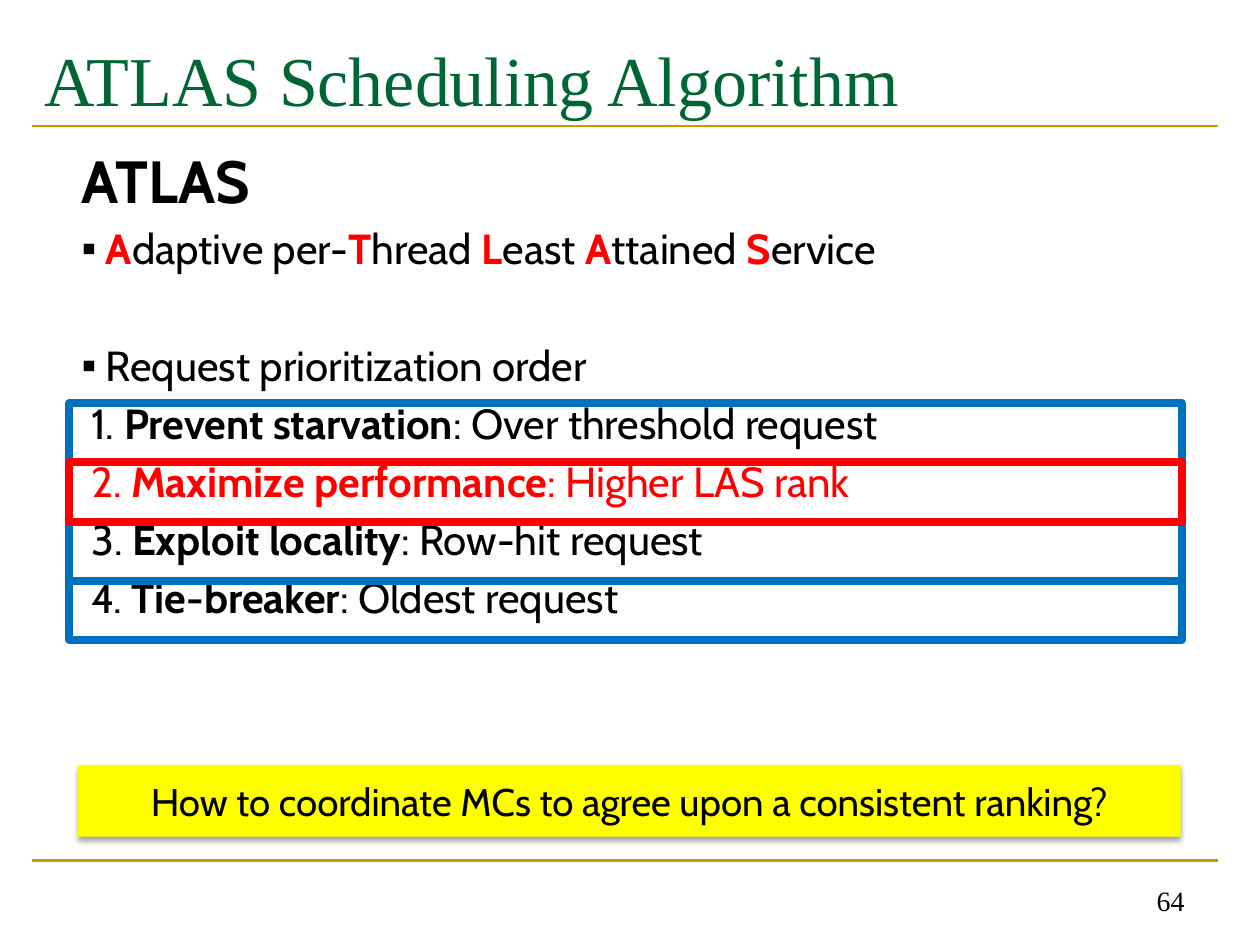
from dataclasses import dataclass

from lxml.etree import SubElement
from pptx import Presentation
from pptx.dml.color import RGBColor as RGB
from pptx.enum.shapes import MSO_CONNECTOR as Connector, MSO_SHAPE as Shape
from pptx.enum.text import MSO_ANCHOR as Anchor, PP_ALIGN as Align
from pptx.oxml.ns import qn
from pptx.util import Inches, Pt


@dataclass(frozen=True)
class Theme:
    serif: str = "Times New Roman"
    sans: str = "Cabin"
    black: RGB = RGB(0, 0, 0)
    green: RGB = RGB(0x00, 0x66, 0x33)
    gold: RGB = RGB(0xCC, 0x99, 0x00)
    red: RGB = RGB(0xFF, 0, 0)
    blue: RGB = RGB(0x00, 0x70, 0xC0)
    yellow: RGB = RGB(0xFF, 0xFF, 0)
    title: int = 40
    heading: int = 34
    body: int = 24
    question: int = 22
    number: int = 16
    rule: float = 1.5
    frame: float = 4.5
    gap: float = 4.4
    section_gap: float = 38


THEME = Theme()
ACRONYM = [("A", "daptive per-"), ("T", "hread "), ("L", "east "),
           ("A", "ttained "), ("S", "ervice")]
PRIORITIES = [("Prevent starvation", "Over threshold request"),
              ("Maximize performance", "Higher LAS rank"),
              ("Exploit locality", "Row-hit request"),
              ("Tie-breaker", "Oldest request")]
HIGHLIGHTED = 1


def inches(*lengths):
    return [Inches(length) for length in lengths]


def add_run(paragraph, text, size, color=THEME.black, bold=False, font=THEME.sans):
    run = paragraph.add_run()
    run.text = text
    run.font.name = font
    run.font.size = Pt(size)
    run.font.bold = bold
    run.font.color.rgb = color


def add_paragraph(frame, space=THEME.gap):
    paragraph = frame.add_paragraph()
    paragraph.space_before = Pt(space)
    return paragraph


def set_bullet(paragraph, character="▪"):
    properties = paragraph._p.get_or_add_pPr()
    color = SubElement(properties, qn("a:buClr"))
    SubElement(color, qn("a:srgbClr"), val=str(THEME.black))
    SubElement(properties, qn("a:buFont"), typeface="Arial")
    SubElement(properties, qn("a:buChar"), char=character)


def set_hanging_indent(paragraph, length):
    properties = paragraph._p.get_or_add_pPr()
    properties.set("marL", str(length))
    properties.set("indent", str(-length))


def add_rule(slide, left, top, width):
    line = slide.shapes.add_connector(
        Connector.STRAIGHT, *inches(left, top, left + width, top))
    line.line.color.rgb = THEME.gold
    line.line.width = Pt(THEME.rule)
    SubElement(line._element.spPr, qn("a:effectLst"))


def add_title(slide, left, top, width, height):
    title = slide.shapes.title
    title.left, title.top, title.width, title.height = inches(left, top, width, height)
    frame = title.text_frame
    frame.vertical_anchor = Anchor.TOP
    frame.margin_top = Inches(0.12)
    paragraph = frame.paragraphs[0]
    paragraph.alignment = Align.LEFT
    add_run(paragraph, "ATLAS Scheduling Algorithm", THEME.title, THEME.green,
            font=THEME.serif)


def add_body(slide, left, top, width, height):
    frame = slide.shapes.add_textbox(*inches(left, top, width, height)).text_frame
    frame.word_wrap = True
    add_run(frame.paragraphs[0], "ATLAS", THEME.heading, bold=True)

    # Meaning of the acronym, initials in red
    paragraph = add_paragraph(frame)
    set_bullet(paragraph)
    add_run(paragraph, " ", THEME.body)
    for initial, rest in ACRONYM:
        add_run(paragraph, initial, THEME.body, THEME.red, bold=True)
        add_run(paragraph, rest, THEME.body)

    # Prioritization order
    paragraph = add_paragraph(frame, THEME.section_gap)
    set_bullet(paragraph)
    add_run(paragraph, " Request prioritization order", THEME.body)
    for index, (goal, rule) in enumerate(PRIORITIES):
        color = THEME.red if index == HIGHLIGHTED else THEME.black
        paragraph = add_paragraph(frame)
        set_hanging_indent(paragraph, Inches(0.56))
        add_run(paragraph, f" {index + 1}. ", THEME.body, color)
        add_run(paragraph, goal, THEME.body, color, bold=True)
        add_run(paragraph, f": {rule}", THEME.body, color)


def add_priority_frames(slide, left, top, width, height):
    row_height = height / len(PRIORITIES)
    frames = [(row, THEME.blue) for row in range(len(PRIORITIES))]
    # The highlighted row is framed last, above its neighbours
    for row, color in frames + [(HIGHLIGHTED, THEME.red)]:
        shape = slide.shapes.add_shape(
            Shape.RECTANGLE, *inches(left, top + row * row_height, width, row_height))
        shape.shadow.inherit = False
        shape.fill.background()
        shape.line.color.rgb = color
        shape.line.width = Pt(THEME.frame)


def add_question(slide, left, top, width, height):
    shape = slide.shapes.add_shape(Shape.RECTANGLE, *inches(left, top, width, height))
    shape.fill.solid()
    shape.fill.fore_color.rgb = THEME.yellow
    shape.line.fill.background()

    # Soft shadow straight below
    shape.shadow.inherit = False
    effects = shape._element.spPr.find(qn("a:effectLst"))
    shadow = SubElement(effects, qn("a:outerShdw"), blurRad=str(Pt(3.1)),
                        dist=str(Pt(1.8)), dir="5400000", rotWithShape="0")
    color = SubElement(shadow, qn("a:srgbClr"), val=str(THEME.black))
    SubElement(color, qn("a:alpha"), val="35000")

    frame = shape.text_frame
    frame.word_wrap = True
    frame.vertical_anchor = Anchor.MIDDLE
    paragraph = frame.paragraphs[0]
    paragraph.alignment = Align.CENTER
    add_run(paragraph, "How to coordinate MCs to agree upon a consistent ranking?",
            THEME.question)


def add_slide_number(slide, left, top, width, height):
    frame = slide.shapes.add_textbox(*inches(left, top, width, height)).text_frame
    frame.word_wrap = True
    frame.vertical_anchor = Anchor.BOTTOM
    paragraph = frame.paragraphs[0]
    paragraph.alignment = Align.RIGHT
    add_run(paragraph, "64", THEME.number, font=THEME.serif)


def main():
    presentation = Presentation()
    presentation.slide_width, presentation.slide_height = inches(10, 7.5)
    slide = presentation.slides.add_slide(
        presentation.slide_layouts.get_by_name("Title Only"))
    for top in (1, 6.83):
        add_rule(slide, 0.25, top, 9.42)
    add_title(slide, 0.25, 0.17, 9.42, 1.17)
    add_body(slide, 0.55, 1.09, 9.03, 4.95)
    add_slide_number(slide, 7.17, 6.83, 2.33, 0.5)
    add_priority_frames(slide, 0.55, 3.2, 8.83, 1.88)
    add_question(slide, 0.62, 6.07, 8.75, 0.57)
    presentation.save("out.pptx")


if __name__ == "__main__":
    main()
